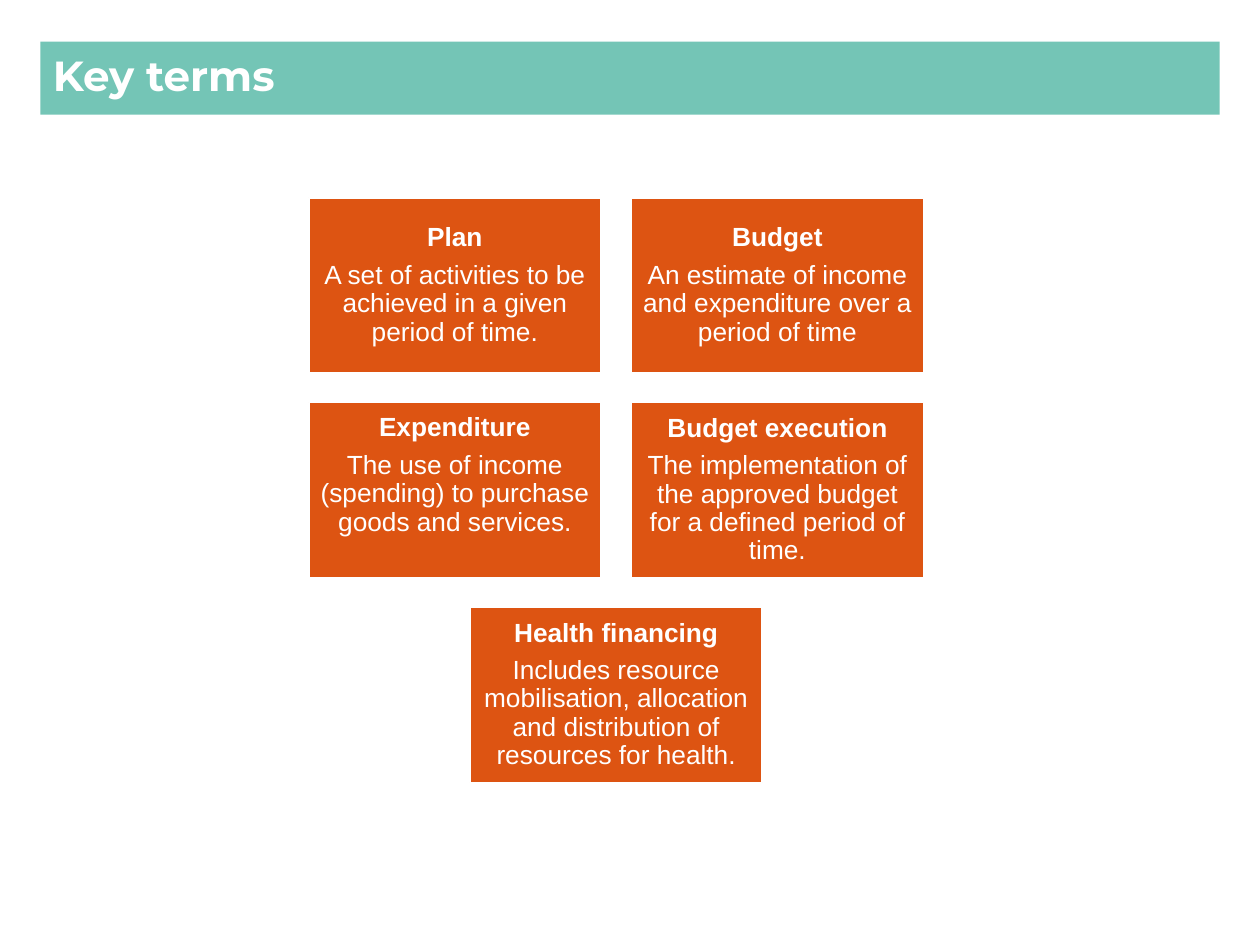
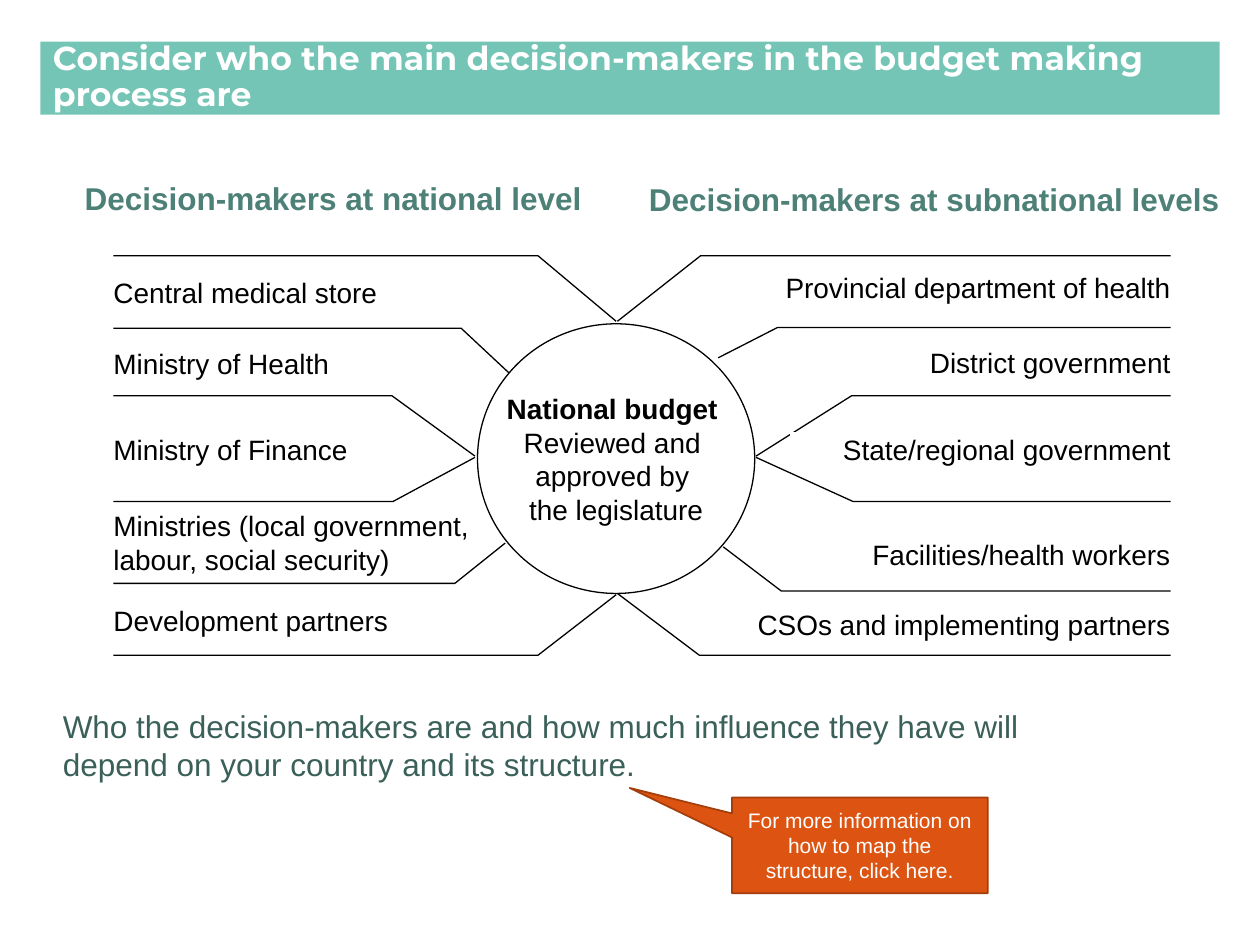
from dataclasses import dataclass

from pptx import Presentation
from pptx.dml.color import RGBColor
from pptx.enum.shapes import MSO_SHAPE
from pptx.enum.text import MSO_ANCHOR, MSO_AUTO_SIZE, PP_ALIGN
from pptx.util import Inches, Pt

RECTANGLE = MSO_SHAPE.RECTANGLE
OVAL = MSO_SHAPE.OVAL
CALLOUT = MSO_SHAPE.RECTANGULAR_CALLOUT
LEFT, CENTER, RIGHT = PP_ALIGN.LEFT, PP_ALIGN.CENTER, PP_ALIGN.RIGHT
TOP, MIDDLE = MSO_ANCHOR.TOP, MSO_ANCHOR.MIDDLE
NO_AUTOFIT = MSO_AUTO_SIZE.NONE

TITLE_ONLY = 5
GRID_COLUMNS, GRID_ROWS = 100, 75


@dataclass(frozen=True)
class Theme:
    white: str = "FFFFFF"
    black: str = "000000"
    band: str = "74C5B6"
    accent: str = "DD5412"
    accent_edge: str = "A33E0D"
    heading: str = "4D8076"
    remark: str = "3A6059"
    title_font: str = "Montserrat"
    body_font: str = "Arial"
    title_size: float = 24
    long_title_size: float = 18.9
    heading_size: float = 18
    label_size: float = 16
    card_size: float = 15
    callout_size: float = 12
    hairline: float = 0.75
    edge: float = 1
    tight: float = 0.9
    default_inset: tuple = (0.1, 0.05, 0.1, 0.05)


class Deck:
    """Draws on the current slide; boxes are (column, row, columns, rows)."""

    def __init__(self, theme):
        self.theme = theme
        self.presentation = Presentation()
        self.presentation.slide_width = Inches(10)
        self.presentation.slide_height = Inches(7.5)
        self.slide = None

    def x(self, columns):
        return round(self.presentation.slide_width * columns / GRID_COLUMNS)

    def y(self, rows):
        return round(self.presentation.slide_height * rows / GRID_ROWS)

    def place(self, box):
        left, top, width, height = box
        return self.x(left), self.y(top), self.x(width), self.y(height)

    def paint(self, shape, fill=None, line=None, line_width=None):
        if fill:
            shape.fill.solid()
            shape.fill.fore_color.rgb = RGBColor.from_string(fill)
        else:
            shape.fill.background()
        if line:
            shape.line.color.rgb = RGBColor.from_string(line)
            shape.line.width = Pt(line_width)
        else:
            shape.line.fill.background()

    def set_text(self, shape, lines, size, color, font=None, align=LEFT, anchor=TOP,
                 inset=None, bold_lines=0, spacing=None, after=None, wrap=True):
        """Fill a shape with paragraphs, the first bold_lines of them in bold."""
        frame = shape.text_frame
        frame.text = "\n".join(lines)
        frame.word_wrap = wrap
        frame.auto_size = NO_AUTOFIT
        frame.vertical_anchor = anchor
        margins = [Inches(side) for side in inset or self.theme.default_inset]
        (frame.margin_left, frame.margin_top,
         frame.margin_right, frame.margin_bottom) = margins
        for number, paragraph in enumerate(frame.paragraphs):
            paragraph.alignment = align
            if spacing:
                paragraph.line_spacing = spacing
            if after:
                paragraph.space_after = Pt(after)
            for run in paragraph.runs:
                run.font.name = font or self.theme.body_font
                run.font.size = Pt(size)
                run.font.bold = number < bold_lines
                run.font.color.rgb = RGBColor.from_string(color)

    def new_slide(self, title, size):
        layout = self.presentation.slide_layouts[TITLE_ONLY]
        self.slide = self.presentation.slides.add_slide(layout)
        band = self.slide.shapes.title
        band.left, band.top, band.width, band.height = self.place((3.2, 3.3, 93.6, 5.8))
        self.paint(band, self.theme.band)
        self.set_text(band, [title], size, self.theme.white, self.theme.title_font,
                      anchor=MIDDLE, bold_lines=1, spacing=self.theme.tight)

    def shape(self, kind, box, fill, line=None, line_width=None):
        shape = self.slide.shapes.add_shape(kind, *self.place(box))
        shape.shadow.inherit = False
        self.paint(shape, fill, line, line_width)
        return shape

    def text(self, box, words, size, color, fill=None, **style):
        text_box = self.slide.shapes.add_textbox(*self.place(box))
        self.paint(text_box, fill)
        self.set_text(text_box, [words], size, color, **style)

    def card(self, box, term, meaning, lift):
        """Draw a term with its meaning; lift is extra room below, in inches."""
        card = self.shape(RECTANGLE, box, self.theme.accent, self.theme.white, self.theme.edge)
        self.set_text(card, [term, meaning], self.theme.card_size, self.theme.white,
                      align=CENTER, anchor=MIDDLE, inset=(0.06, 0.06, 0.06, 0.06 + lift),
                      bold_lines=1, spacing=self.theme.tight, after=5.25)

    def label(self, box, words, align, fill=None):
        self.text(box, words, self.theme.label_size, self.theme.black, fill,
                  align=align, inset=(0, 0, 0, 0))

    def polyline(self, points):
        start, *others = [(self.x(column), self.y(row)) for column, row in points]
        builder = self.slide.shapes.build_freeform(*start)
        builder.add_line_segments(others, close=False)
        line = builder.convert_to_shape()
        line.shadow.inherit = False
        self.paint(line, None, self.theme.black, self.theme.hairline)

    def callout(self, box, words, tip):
        callout = self.shape(CALLOUT, box, self.theme.accent,
                             self.theme.accent_edge, self.theme.edge)
        for index, offset in enumerate(tip):
            callout.adjustments[index] = offset
        self.set_text(callout, [words], self.theme.callout_size, self.theme.white,
                      align=CENTER, anchor=MIDDLE)


# Each row of cards: term, meaning, extra room below the text
TERM_ROWS = [
    [("Plan", "A set of activities to be achieved in a given period of time.", 0),
     ("Budget", "An estimate of income and expenditure over a period of time", 0)],
    [("Expenditure", "The use of income (spending) to purchase goods and services.", 0.23),
     ("Budget execution",
      "The implementation of the approved budget for a defined period of time.", 0)],
    [("Health financing",
      "Includes resource mobilisation, allocation and distribution of resources for health.",
      0)],
]

LEFT_EDGE, RIGHT_EDGE = 9, 92.9
LABEL_HEIGHT = 2.7

# Column and row at the circle, then column and row of the bend
NATIONAL_RAYS = [
    (48.9, 25.5, 42.7, 20.3), (40.4, 29.6, 36.6, 26.05), (37.7, 36.2, 31.1, 31.4),
    (37.7, 36.3, 31.2, 39.8), (40.1, 43.1, 36.1, 46.3), (48.9, 47.2, 42.7, 52),
]
SUBNATIONAL_RAYS = [
    (49, 25.5, 55.6, 20.3), (57, 28.4, 61.7, 26), (60, 36.2, 67.6, 31.4),
    (60, 36.3, 67.7, 39.8), (57.4, 43.4, 62, 46.9), (49, 47.1, 55.5, 52),
]

# Row, width, lines of text, words
NATIONAL_LABELS = [
    (21.9, 25.9, 1, "Central medical store"),
    (27.5, 21.3, 1, "Ministry of Health"),
    (34.3, 21.3, 1, "Ministry of Finance"),
    (40.4, 28.9, 2, "Ministries (local government, labour, social security)"),
    (47.9, 25.9, 1, "Development partners"),
]
# Row, width, words
SUBNATIONAL_LABELS = [
    (21.5, 33.2, "Provincial department of health"),
    (27.4, 32.8, "District government"),
    (34.3, 30.2, "State/regional government"),
    (42.7, 28.8, "Facilities/health workers"),
    (48.2, 34.1, "CSOs and implementing partners"),
]


def add_key_terms(deck):
    deck.new_slide("Key terms", deck.theme.title_size)
    center, first_row = 48.9, 15.7
    width, height = 23.2, 13.9
    column_pitch, row_pitch = 25.6, 16.25
    for row, terms in enumerate(TERM_ROWS):
        left = center - ((len(terms) - 1) * column_pitch + width) / 2
        for column, (term, meaning, lift) in enumerate(terms):
            box = (left + column * column_pitch, first_row + row * row_pitch, width, height)
            deck.card(box, term, meaning, lift)


def add_decision_makers(deck):
    theme = deck.theme
    deck.new_slide("Consider who the main decision-makers in the budget making process are",
                   theme.long_title_size)

    for box, words in [((4, 13.7, 44.9, 4), "Decision-makers at national level"),
                       ((49, 13.8, 50.3, 4), "Decision-makers at subnational levels")]:
        deck.text(box, words, theme.heading_size, theme.heading, align=CENTER, bold_lines=1)

    budget = deck.shape(OVAL, (37.9, 25.7, 22, 21.4), theme.white, theme.black, theme.hairline)
    deck.set_text(budget,
                  ["National budget ", "Reviewed and ", "approved by ", "the legislature"],
                  theme.label_size, theme.black, align=CENTER, anchor=MIDDLE,
                  bold_lines=1, wrap=False)

    for edge, rays in [(LEFT_EDGE, NATIONAL_RAYS), (RIGHT_EDGE, SUBNATIONAL_RAYS)]:
        for start_column, start_row, bend_column, bend_row in rays:
            deck.polyline([(start_column, start_row), (bend_column, bend_row),
                           (edge, bend_row)])

    for row, width, line_count, words in NATIONAL_LABELS:
        deck.label((LEFT_EDGE, row, width, line_count * LABEL_HEIGHT), words, LEFT)
    for row, width, words in SUBNATIONAL_LABELS:
        deck.label((RIGHT_EDGE - width, row, width, LABEL_HEIGHT), words, RIGHT, theme.white)

    deck.text((4, 55.6, 83.4, 7.1),
              "Who the decision-makers are and how much influence they have will "
              "depend on your country and its structure.",
              theme.heading_size, theme.remark)
    deck.callout((58.1, 63.3, 20.3, 7.6),
                 "For more information on how to map the structure, click here.",
                 tip=(-0.9, -0.6))


def main():
    deck = Deck(Theme())
    add_key_terms(deck)
    add_decision_makers(deck)
    deck.presentation.save("out.pptx")


if __name__ == "__main__":
    main()
